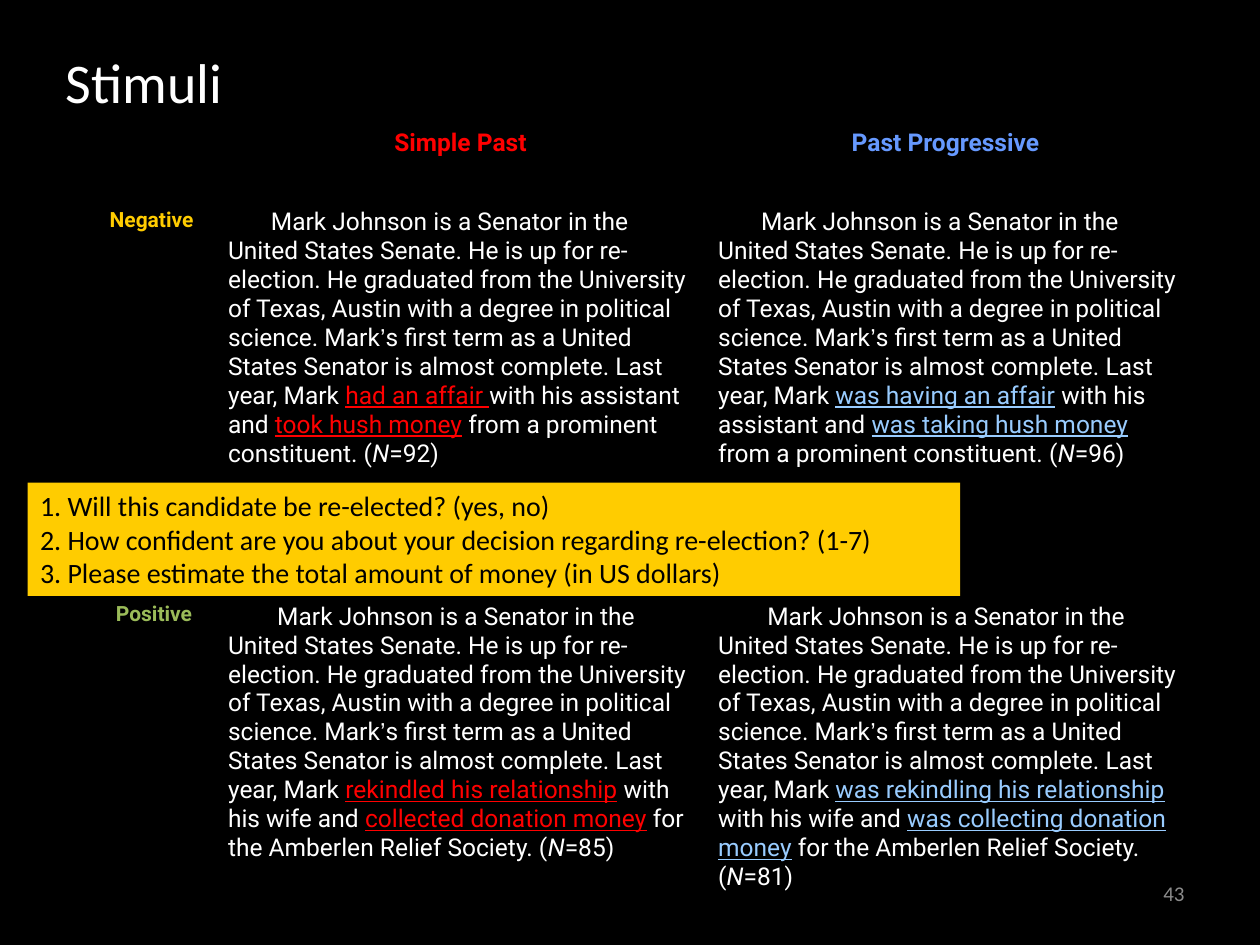
from lxml import etree
from pptx import Presentation
from pptx.dml.color import RGBColor
from pptx.enum.shapes import MSO_SHAPE
from pptx.enum.text import MSO_ANCHOR, MSO_AUTO_SIZE, PP_ALIGN
from pptx.oxml.ns import qn
from pptx.util import Inches, Pt

RECT = MSO_SHAPE.RECTANGLE
TOP, MIDDLE = MSO_ANCHOR.TOP, MSO_ANCHOR.MIDDLE
LEFT, CENTER, RIGHT = PP_ALIGN.LEFT, PP_ALIGN.CENTER, PP_ALIGN.RIGHT
FIXED = MSO_AUTO_SIZE.NONE

BLACK, WHITE, GOLD, RED = "000000", "FFFFFF", "FFCC00", "FF0000"
BLUE, SKY, GREEN, GRAY = "6699FF", "99CCFF", "9BBB59", "8C8C8C"

TITLE, NUMBER = "Stimuli", "43"
COLS = [1.22, 3.89, 3.89]
ROWS = [0.64, 0.63, 3.13, 2.57]
HEADS = [("Simple Past", RED, CENTER, 0), ("Past Progressive", BLUE, LEFT, 1.06)]
HUES = [RED, SKY]
INTRO = [
    ("Mark Johnson is a Senator in the United States Senate. He is up for "
     "re-election. He graduated from the University of Texas, Austin with a "
     "degree in political science. Mark", "Roboto"),
    ("’", "Arial"),
    ("s first term as a United States Senator is almost complete. "
     "Last year, Mark ", "Roboto"),
]
STORIES = [
    {"label": "Negative", "hue": GOLD, "shift": 0.28, "indent": 0.34,
     "cases": [
         ("had an affair ", "with his assistant and ", "took hush money",
          " from a prominent constituent. (", "=92)"),
         ("was having an affair", " with his assistant and ",
          "was taking hush money", " from a prominent constituent. (", "=96)"),
     ]},
    {"label": "Positive", "hue": GREEN, "shift": 0.33, "indent": 0.39,
     "cases": [
         ("rekindled his relationship", " with his wife and ",
          "collected donation money", " for the Amberlen Relief Society. (", "=85)"),
         ("was rekindling his relationship", " with his wife and ",
          "was collecting donation money", " for the Amberlen Relief Society. (",
          "=81)"),
     ]},
]
ASKS = [
    "1. Will this candidate be re-elected? (yes, no)",
    "2. How confident are you about your decision regarding re-election? (1-7)",
    "3. Please estimate the total amount of money (in US dollars)",
]


def rgb(hue):
    return RGBColor.from_string(hue)


def put(para, text, size, hue, face="Calibri", bold=False, under=False, slant=False):
    run = para.add_run()
    run.text = text
    font = run.font
    font.size, font.name, font.bold = Pt(size), face, bold
    font.underline, font.italic = under, slant
    font.color.rgb = rgb(hue)


def start(cell, indent, align=LEFT):
    para = cell.text_frame.paragraphs[0]
    para.alignment = align
    if indent:
        para._p.get_or_add_pPr().set("indent", str(int(Inches(indent))))
    return para


def edge(cell, row):
    props = cell._tc.get_or_add_tcPr()
    shown = {"lnT": row >= 2, "lnB": row in (1, 2)}
    for side in ("lnL", "lnR", "lnT", "lnB"):
        line = etree.SubElement(props, qn("a:" + side), w=str(int(Pt(1))))
        if shown.get(side):
            fill = etree.SubElement(line, qn("a:solidFill"))
            etree.SubElement(fill, qn("a:srgbClr"), val=BLACK)
        else:
            etree.SubElement(line, qn("a:noFill"))
    cell.fill.background()


def tell(cell, indent, hue, case):
    para = start(cell, indent)
    for text, face in INTRO:
        put(para, text, 14, WHITE, face)
    first, link, second, rest, count = case
    put(para, first, 14, hue, "Roboto", under=True)
    put(para, link, 14, WHITE, "Roboto")
    put(para, second, 14, hue, "Roboto", under=True)
    put(para, rest, 14, WHITE, "Roboto")
    put(para, "N", 14, WHITE, "Roboto", slant=True)
    put(para, count, 14, WHITE, "Roboto")


def add_grid(slide):
    frame = slide.shapes.add_table(
        len(ROWS), len(COLS), Inches(0.49), Inches(0.33),
        Inches(sum(COLS)), Inches(sum(ROWS)))
    grid = frame.table
    grid.first_row = grid.horz_banding = False
    for col, width in zip(grid.columns, COLS):
        col.width = Inches(width)
    for row, height in enumerate(ROWS):
        grid.rows[row].height = Inches(height)
        for cell in grid.rows[row].cells:
            edge(cell, row)
    grid.cell(0, 1).merge(grid.cell(0, 2))
    for col, (text, hue, align, indent) in enumerate(HEADS, 1):
        put(start(grid.cell(1, col), indent, align), text, 14, hue, "Roboto", True)
    for row, story in enumerate(STORIES, 2):
        para = start(grid.cell(row, 0), story["shift"])
        put(para, story["label"], 12, story["hue"], "Roboto", True)
        for col, (hue, case) in enumerate(zip(HUES, story["cases"]), 1):
            tell(grid.cell(row, col), story["indent"], hue, case)


def add_asks(slide):
    box = slide.shapes.add_shape(RECT, Inches(0.22), Inches(3.83), Inches(7.4), Inches(0.9))
    box.shadow.inherit = False
    box.fill.solid()
    box.fill.fore_color.rgb = rgb(GOLD)
    box.line.fill.background()
    frame = box.text_frame
    frame.word_wrap = False
    frame.vertical_anchor = TOP
    for i, text in enumerate(ASKS):
        para = frame.add_paragraph() if i else frame.paragraphs[0]
        para.alignment = LEFT
        put(para, text, 16, BLACK)


def main():
    """Build the stimuli slide."""
    deck = Presentation()
    deck.slide_width, deck.slide_height = Inches(10), Inches(7.5)
    slide = deck.slides.add_slide(deck.slide_layouts[5])
    slide.background.fill.solid()
    slide.background.fill.fore_color.rgb = rgb(BLACK)

    title = slide.shapes.title
    title.left, title.top = Inches(0.42), Inches(0.33)
    title.width, title.height = Inches(1.53), Inches(0.63)
    frame = title.text_frame
    frame.auto_size, frame.word_wrap = FIXED, False
    frame.vertical_anchor = TOP
    put(start(title, 0), TITLE, 32, WHITE)

    page = slide.shapes.add_textbox(Inches(7.17), Inches(6.83), Inches(2.33), Inches(0.52))
    page.text_frame.word_wrap = True
    page.text_frame.vertical_anchor = MIDDLE
    put(start(page, 0, RIGHT), NUMBER, 12, GRAY)

    add_grid(slide)
    add_asks(slide)
    deck.save("out.pptx")


if __name__ == "__main__":
    main()
